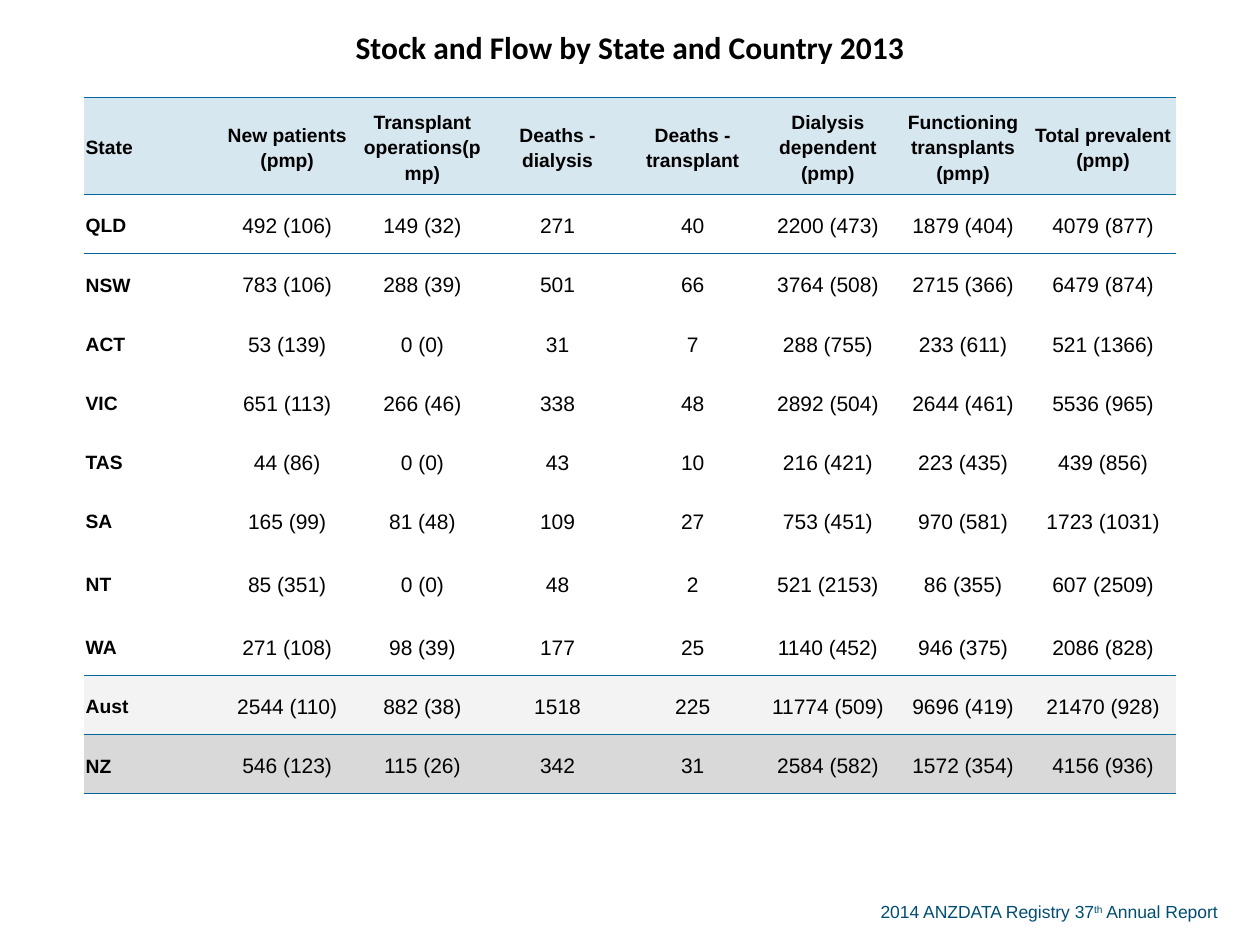
from lxml import etree
from pptx import Presentation
from pptx.dml.color import RGBColor
from pptx.enum.text import MSO_ANCHOR, PP_ALIGN
from pptx.oxml.ns import qn
from pptx.util import Inches, Pt

MIDDLE = MSO_ANCHOR.MIDDLE
LEFT, CENTER = PP_ALIGN.LEFT, PP_ALIGN.CENTER

THEME = {
    "ink": "000000", "rule": "006699", "footer": "004D73",
    "header": "D7E7EF", "Aust": "F3F3F3", "NZ": "D9D9D9",
    "title_font": "Calibri", "body_font": "Arial",
    "title_size": 18, "label_size": 11, "value_size": 12, "footer_size": 10,
    "rule_width": 0.5,
    "plain_table": "{2D5ABB26-0587-4C30-8999-92F81FD0307C}",
}

TITLE = "Stock and Flow by State and Country 2013"
HEADINGS = ["State", "New patients (pmp)", "Transplant operations(pmp)",
            "Deaths - dialysis", "Deaths - transplant",
            "Dialysis dependent (pmp)", "Functioning transplants (pmp)",
            "Total prevalent (pmp)"]
REGIONS = [
    ["QLD", "492 (106)", "149 (32)", "271", "40", "2200 (473)", "1879 (404)", "4079 (877)"],
    ["NSW", "783 (106)", "288 (39)", "501", "66", "3764 (508)", "2715 (366)", "6479 (874)"],
    ["ACT", "53 (139)", "0 (0)", "31", "7", "288 (755)", "233 (611)", "521 (1366)"],
    ["VIC", "651 (113)", "266 (46)", "338", "48", "2892 (504)", "2644 (461)", "5536 (965)"],
    ["TAS", "44 (86)", "0 (0)", "43", "10", "216 (421)", "223 (435)", "439 (856)"],
    ["SA", "165 (99)", "81 (48)", "109", "27", "753 (451)", "970 (581)", "1723 (1031)"],
    ["NT", "85 (351)", "0 (0)", "48", "2", "521 (2153)", "86 (355)", "607 (2509)"],
    ["WA", "271 (108)", "98 (39)", "177", "25", "1140 (452)", "946 (375)", "2086 (828)"],
    ["Aust", "2544 (110)", "882 (38)", "1518", "225", "11774 (509)", "9696 (419)", "21470 (928)"],
    ["NZ", "546 (123)", "115 (26)", "342", "31", "2584 (582)", "1572 (354)", "4156 (936)"],
]
TITLE_ROW = [TITLE] + [""] * (len(HEADINGS) - 1)
ROWS = [TITLE_ROW, HEADINGS] + REGIONS
RULED_EDGES = {0, 1, 9, 10, 11}


def add_run(paragraph, text, font, size, color, bold=False):
    run = paragraph.add_run()
    run.text = text
    run.font.name = font
    run.font.size = Pt(size)
    run.font.bold = bold
    run.font.color.rgb = RGBColor.from_string(color)
    return run


def add_rule(cell, side, position):
    line = etree.Element(qn("a:" + side), w=str(Pt(THEME["rule_width"])))
    fill = etree.SubElement(line, qn("a:solidFill"))
    etree.SubElement(fill, qn("a:srgbClr"), val=THEME["rule"])
    cell._tc.get_or_add_tcPr().insert(position, line)


prs = Presentation()
prs.slide_width, prs.slide_height = Inches(10), Inches(7.5)
W, H = prs.slide_width, prs.slide_height
slide = prs.slides.add_slide(prs.slide_layouts[6])

table_width, last_column = Inches(8.66), Inches(1.15)
row_heights = [Inches({0: 0.77, 1: 0.77, 8: 0.53}.get(r, 0.47))
               for r in range(len(ROWS))]
frame = slide.shapes.add_table(len(ROWS), len(HEADINGS), (W - table_width) // 2, 0,
                               table_width, sum(row_heights))
stock = frame.table
stock.first_row = stock.horz_banding = False
stock._tbl.tblPr.find(qn("a:tableStyleId")).text = THEME["plain_table"]

for column in stock.columns:
    column.width = (table_width - last_column) // (len(HEADINGS) - 1)
stock.columns[len(HEADINGS) - 1].width = last_column
for row, height in zip(stock.rows, row_heights):
    row.height = height
stock.cell(0, 0).merge(stock.cell(0, len(HEADINGS) - 1))

for r, entries in enumerate(ROWS):
    row_fill = THEME["header"] if r == 1 else THEME.get(entries[0])
    for c, entry in enumerate(entries):
        cell = stock.cell(r, c)
        cell.vertical_anchor = MIDDLE
        cell.margin_left = cell.margin_top = cell.margin_right = Inches(0.01)
        cell.margin_bottom = 0
        if row_fill:
            cell.fill.solid()
            cell.fill.fore_color.rgb = RGBColor.from_string(row_fill)
        else:
            cell.fill.background()
        if r in RULED_EDGES:
            add_rule(cell, "lnB", 0)
        if r - 1 in RULED_EDGES:
            add_rule(cell, "lnT", 0)
        if not entry:
            continue
        paragraph = cell.text_frame.paragraphs[0]
        paragraph.alignment = LEFT if r and c == 0 else CENTER
        if r == 0:
            add_run(paragraph, entry, THEME["title_font"], THEME["title_size"],
                    THEME["ink"], True)
            continue
        paragraph.line_spacing = 1.19
        paragraph.space_after = Pt(14)
        label = r == 1 or c == 0
        add_run(paragraph, entry, THEME["body_font"],
                THEME["label_size" if label else "value_size"], THEME["ink"], label)

footer = slide.shapes.add_textbox(int(W * 0.689), int(H * 0.947),
                                  int(W * 0.299), int(H * 0.036))
footer.text_frame.word_wrap = True
source = footer.text_frame.paragraphs[0]
for text, baseline in [("2014 ANZDATA Registry 37", 0), ("th", 30000),
                       (" Annual Report", 0)]:
    run = add_run(source, text, THEME["body_font"], THEME["footer_size"],
                  THEME["footer"])
    if baseline:
        run.font._element.set("baseline", str(baseline))

prs.save("out.pptx")
